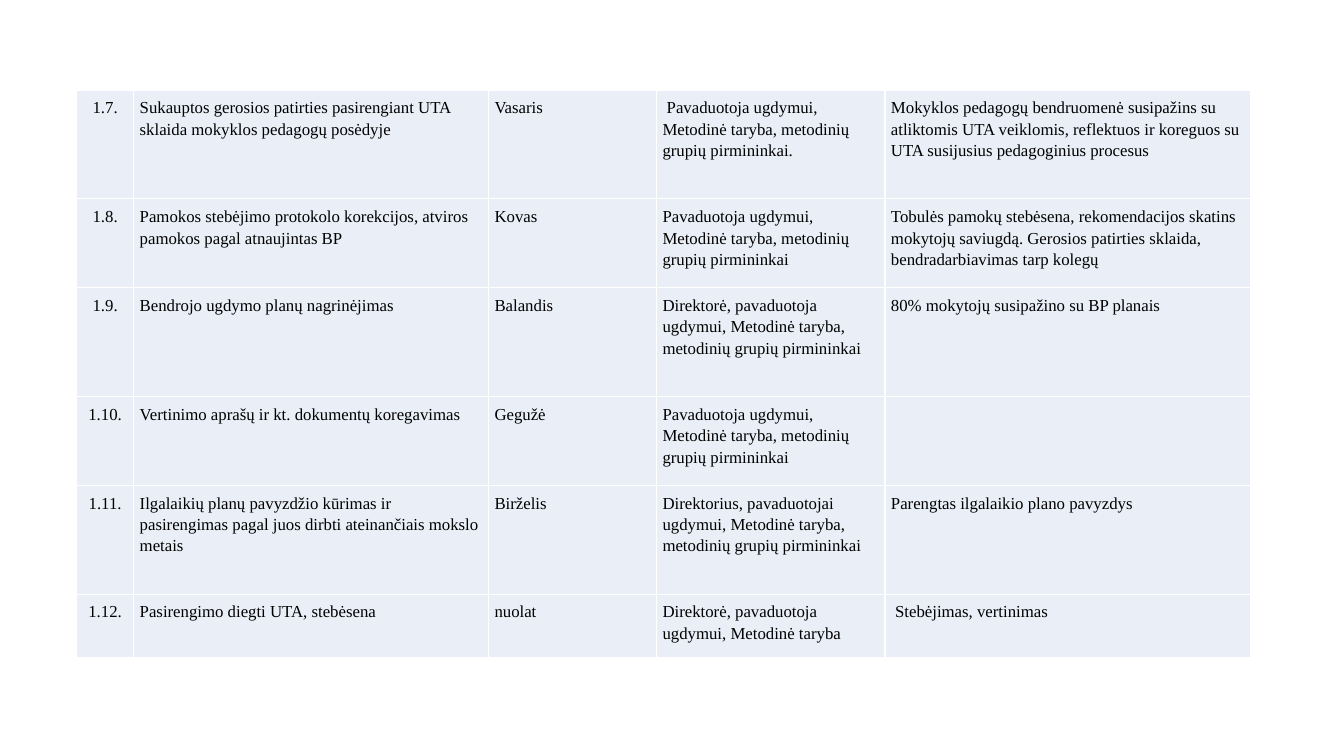
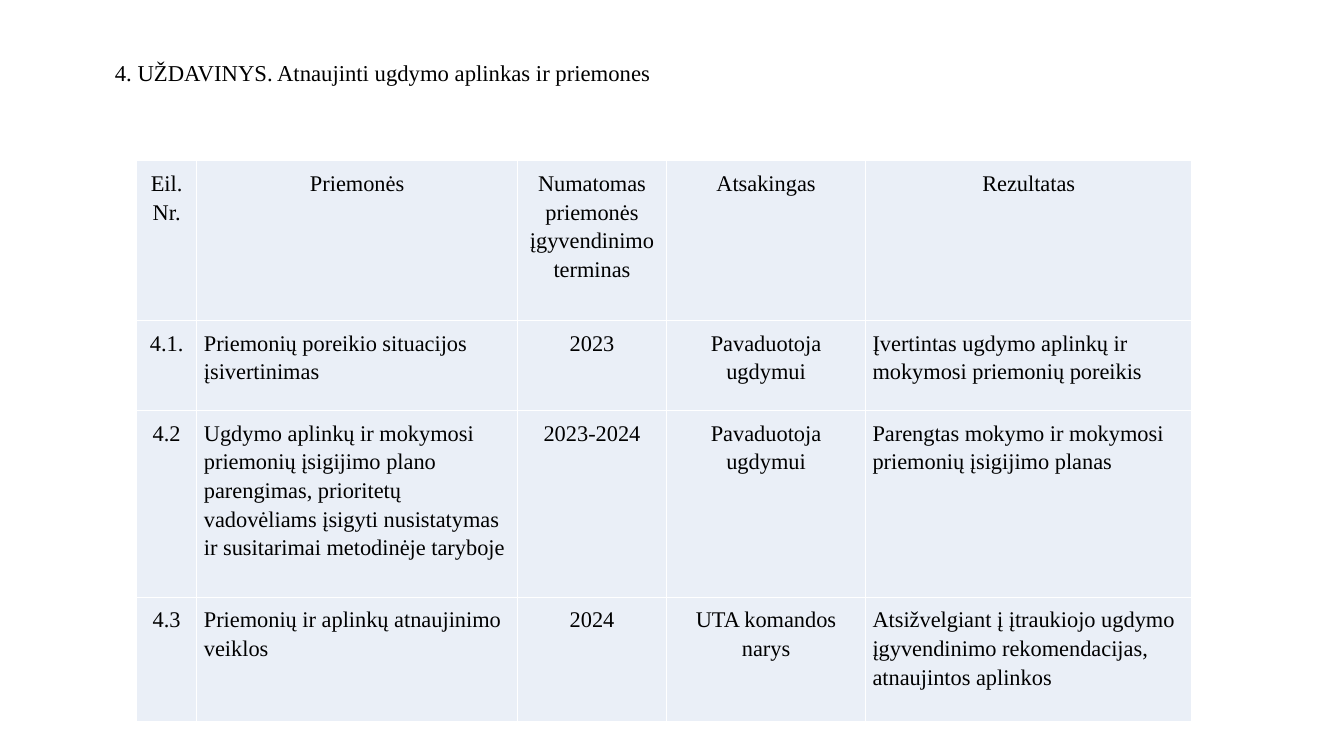
from dataclasses import dataclass

from lxml.etree import SubElement
from pptx import Presentation
from pptx.dml.color import RGBColor
from pptx.enum.text import MSO_ANCHOR, PP_ALIGN as Align
from pptx.oxml.ns import qn
from pptx.slide import Slide
from pptx.table import _Cell as Cell
from pptx.util import Emu, Inches, Pt

# Shared look
BLACK = RGBColor(0x00, 0x00, 0x00)
WHITE = RGBColor(0xFF, 0xFF, 0xFF)
PALE_BLUE = RGBColor(0xEA, 0xEF, 0xF7)
FONT = "Times New Roman"
TITLE_PT = 16.2
TITLE_ONLY, BLANK = 5, 6

prs = Presentation()
prs.slide_width, prs.slide_height = Inches(13.33), Inches(7.5)


def across(percent: float) -> Emu:
    """Share of the slide's width."""
    return Emu(round(prs.slide_width * percent / 100))


def down(percent: float) -> Emu:
    """Share of the slide's height."""
    return Emu(round(prs.slide_height * percent / 100))


@dataclass(frozen=True)
class Plan:
    """A plan table; lengths are percentages of the slide's size."""
    left: float
    top: float
    cols: tuple[float, ...]
    rows: tuple[float, ...]
    centred: tuple[int, ...]
    size: float
    inset: float
    texts: tuple[tuple[str, ...], ...]
    has_header: bool = False


# Content
LEADERS = "Pavaduotoja ugdymui, Metodinė taryba, metodinių grupių pirmininkai"

PREPARATION = Plan(
    left=5.7, top=11.9,
    cols=(4.25, 26.4, 12.5, 17, 27.2),
    rows=(14.4, 11.75, 14.4, 11.75, 14.4, 8.45),
    centred=(0,), size=12, inset=0.06,
    texts=(
        ("1.7.",
         "Sukauptos gerosios patirties pasirengiant UTA sklaida mokyklos "
         "pedagogų posėdyje",
         "Vasaris", f" {LEADERS}.",
         "Mokyklos pedagogų bendruomenė susipažins su atliktomis UTA "
         "veiklomis, reflektuos ir koreguos su UTA susijusius pedagoginius "
         "procesus"),
        ("1.8.",
         "Pamokos stebėjimo protokolo korekcijos, atviros pamokos pagal "
         "atnaujintas BP",
         "Kovas", LEADERS,
         "Tobulės pamokų stebėsena, rekomendacijos skatins mokytojų "
         "saviugdą. Gerosios patirties sklaida, bendradarbiavimas tarp "
         "kolegų"),
        ("1.9.", "Bendrojo ugdymo planų nagrinėjimas", "Balandis",
         "Direktorė, pavaduotoja ugdymui, Metodinė taryba, metodinių grupių "
         "pirmininkai",
         "80% mokytojų susipažino su BP planais"),
        ("1.10.", "Vertinimo aprašų ir kt. dokumentų koregavimas", "Gegužė",
         LEADERS, ""),
        ("1.11.",
         "Ilgalaikių planų pavyzdžio kūrimas ir pasirengimas pagal juos "
         "dirbti ateinančiais mokslo metais",
         "Birželis",
         "Direktorius, pavaduotojai ugdymui, Metodinė taryba, metodinių "
         "grupių pirmininkai",
         "Parengtas ilgalaikio plano pavyzdys"),
        ("1.12.", "Pasirengimo diegti UTA, stebėsena", "nuolat",
         "Direktorė, pavaduotoja ugdymui, Metodinė taryba",
         " Stebėjimas, vertinimas"),
    ),
)

ENVIRONMENT = Plan(
    left=10.15, top=21.25,
    cols=(4.5, 23.85, 11.1, 14.8, 24.3),
    rows=(21.15, 11.9, 24.7, 16.5),
    centred=(0, 2, 3), size=16, inset=0.07, has_header=True,
    texts=(
        ("Eil. Nr.", "Priemonės", "Numatomas priemonės įgyvendinimo terminas",
         "Atsakingas", "Rezultatas"),
        ("4.1.", "Priemonių poreikio situacijos įsivertinimas", "2023",
         "Pavaduotoja ugdymui",
         "Įvertintas ugdymo aplinkų ir mokymosi priemonių poreikis"),
        ("4.2",
         "Ugdymo aplinkų ir mokymosi priemonių įsigijimo plano parengimas, "
         "prioritetų vadovėliams įsigyti nusistatymas ir susitarimai "
         "metodinėje taryboje",
         "2023-2024", "Pavaduotoja ugdymui",
         "Parengtas mokymo ir mokymosi priemonių įsigijimo planas"),
        ("4.3", "Priemonių ir aplinkų atnaujinimo veiklos", "2024",
         "UTA komandos narys",
         "Atsižvelgiant į įtraukiojo ugdymo įgyvendinimo rekomendacijas, "
         "atnaujintos aplinkos"),
    ),
)


# Drawing
def write(p, text: str, size: float, align: Align, spacing: float) -> None:
    """Put one formatted run in a paragraph."""
    p.alignment, p.line_spacing = align, spacing
    r = p.add_run()
    r.text = text
    r.font.name, r.font.size = FONT, Pt(size)
    r.font.color.rgb = BLACK


def add_borders(cell: Cell) -> None:
    """White one-point lines; they must come before the cell's fill."""
    tc_pr = cell._tc.get_or_add_tcPr()
    for i, side in enumerate(("lnL", "lnR", "lnT", "lnB")):
        ln = SubElement(tc_pr, qn(f"a:{side}"), w=str(Pt(1)))
        fill = SubElement(ln, qn("a:solidFill"))
        SubElement(fill, qn("a:srgbClr"), val=str(WHITE))
        tc_pr.insert(i, ln)


def add_plan(s: Slide, plan: Plan) -> None:
    frame = s.shapes.add_table(
        len(plan.rows), len(plan.cols), across(plan.left), down(plan.top),
        across(sum(plan.cols)), down(sum(plan.rows)))
    table = frame.table
    table.first_row = table.horz_banding = False
    for col, share in zip(table.columns, plan.cols):
        col.width = across(share)
    for row, share in zip(table.rows, plan.rows):
        row.height = down(share)

    for i, texts in enumerate(plan.texts):
        for j, text in enumerate(texts):
            cell = table.cell(i, j)
            cell.fill.solid()
            cell.fill.fore_color.rgb = PALE_BLUE
            add_borders(cell)
            cell.margin_left = cell.margin_right = Inches(plan.inset)
            cell.margin_top = cell.margin_bottom = Inches(plan.inset)
            if text:
                is_header = plan.has_header and i == 0
                centred = is_header or j in plan.centred
                write(cell.text_frame.paragraphs[0], text, plan.size,
                      Align.CENTER if centred else Align.LEFT, 1.15)


def set_title(s: Slide, text: str) -> None:
    sp = s.shapes.title
    sp.left, sp.top = across(6.9), down(5.33)
    sp.width, sp.height = across(86.27), down(10.13)
    tf = sp.text_frame
    tf.word_wrap = True
    tf.vertical_anchor = MSO_ANCHOR.MIDDLE
    tf.margin_left, tf.margin_bottom = Inches(0.22), Inches(0.13)
    write(tf.paragraphs[0], text, TITLE_PT, Align.LEFT, 0.9)


def main() -> None:
    # Preparation steps, continued
    s = prs.slides.add_slide(prs.slide_layouts[BLANK])
    add_plan(s, PREPARATION)

    # Task 4
    s = prs.slides.add_slide(prs.slide_layouts[TITLE_ONLY])
    set_title(s, "4. UŽDAVINYS. Atnaujinti ugdymo aplinkas ir priemones")
    add_plan(s, ENVIRONMENT)

    prs.save("out.pptx")


if __name__ == "__main__":
    main()
